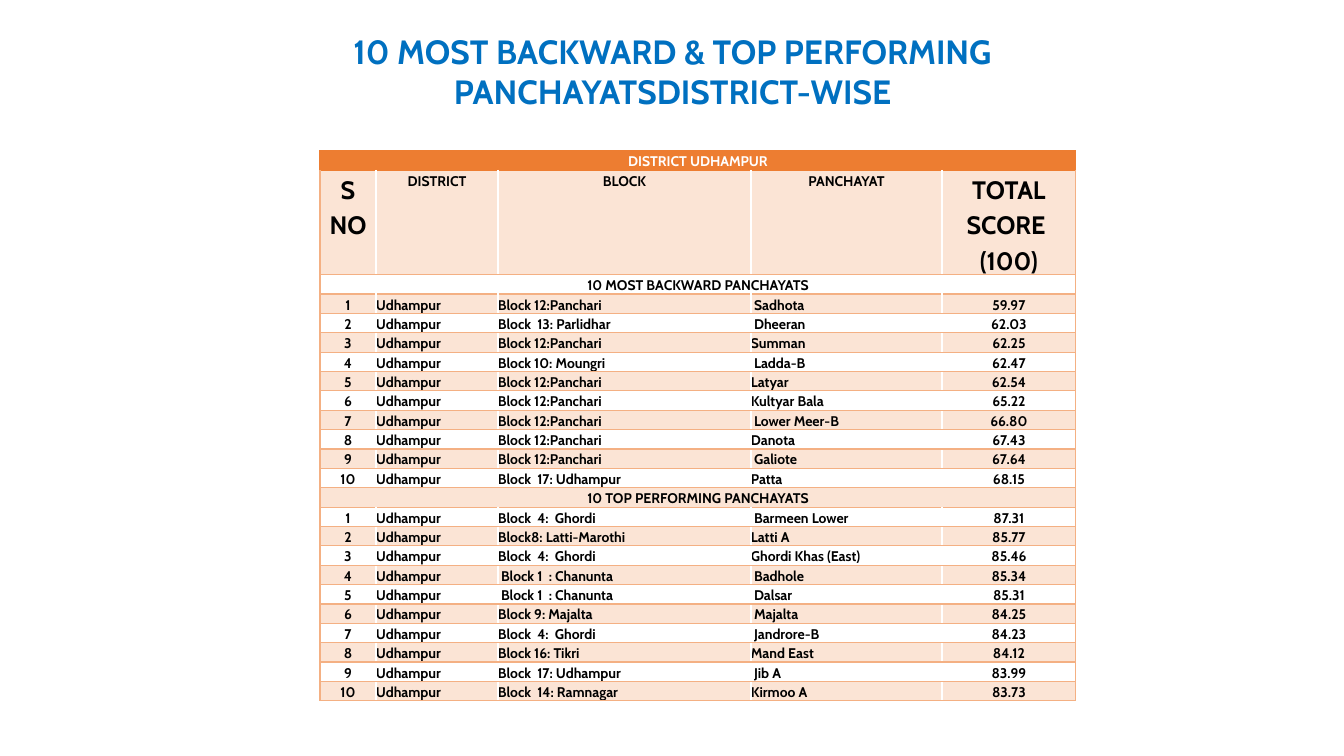
from dataclasses import dataclass

import pptx
import pptx.dml.color
import pptx.enum.text
import pptx.oxml
import pptx.oxml.ns
import pptx.presentation
import pptx.slide
import pptx.table
import pptx.text.text
import pptx.util

SLIDE_WIDTH, SLIDE_HEIGHT = 1344, 756
EMU_PER_PX = 12192000 / SLIDE_WIDTH
FONT = "Cabin"
COLORS = {
    "title": "0070C0",
    "white": "FFFFFF",
    "black": "000000",
    "orange": "ED7D31",
    "peach": "FBE4D5",
    "rule": "F4B083",
}
COLUMN_WIDTHS = (56, 122, 253, 191, 134)
CENTERED_COLUMNS = (0, 4)
ROW_HEIGHT, HEADINGS_HEIGHT = 19, 38
PLAIN_TABLE_STYLE = "{2D5ABB26-0587-4C30-8999-92F81FD0307C}"
CENTER = pptx.enum.text.PP_ALIGN.CENTER
LEFT = pptx.enum.text.PP_ALIGN.LEFT


@dataclass(frozen=True)
class Panchayat:
    block: str
    name: str
    score: str


@dataclass(frozen=True)
class Section:
    heading: str
    panchayats: tuple[Panchayat, ...]


SECTIONS = (
    Section("10 MOST BACKWARD PANCHAYATS", (
        Panchayat("Block 12:Panchari", " Sadhota", "59.97"),
        Panchayat("Block  13: Parlidhar", " Dheeran", "62.03"),
        Panchayat("Block 12:Panchari", "Summan", "62.25"),
        Panchayat("Block 10: Moungri", " Ladda-B", "62.47"),
        Panchayat("Block 12:Panchari", "Latyar", "62.54"),
        Panchayat("Block 12:Panchari", "Kultyar Bala", "65.22"),
        Panchayat("Block 12:Panchari", " Lower Meer-B", "66.80"),
        Panchayat("Block 12:Panchari", "Danota", "67.43"),
        Panchayat("Block 12:Panchari", " Galiote", "67.64"),
        Panchayat("Block  17: Udhampur", "Patta", "68.15"),
    )),
    Section("10 TOP PERFORMING PANCHAYATS", (
        Panchayat("Block  4:  Ghordi", " Barmeen Lower", "87.31"),
        Panchayat("Block8: Latti-Marothi", "Latti A", "85.77"),
        Panchayat("Block  4:  Ghordi", "Ghordi Khas (East)", "85.46"),
        Panchayat(" Block 1  : Chanunta", " Badhole", "85.34"),
        Panchayat(" Block 1  : Chanunta", " Dalsar", "85.31"),
        Panchayat("Block 9: Majalta", " Majalta", "84.25"),
        Panchayat("Block  4:  Ghordi", " Jandrore-B", "84.23"),
        Panchayat("Block 16: Tikri", "Mand East", "84.12"),
        Panchayat("Block  17: Udhampur", " Jib A", "83.99"),
        Panchayat("Block  14: Ramnagar", "Kirmoo A", "83.73"),
    )),
)


def px(length: float) -> pptx.util.Emu:
    return pptx.util.Emu(round(length * EMU_PER_PX))


def rgb(color: str) -> pptx.dml.color.RGBColor:
    return pptx.dml.color.RGBColor.from_string(COLORS[color])


def add_text(paragraph: pptx.text.text._Paragraph, text: str, size: int, color: str) -> None:
    run = paragraph.add_run()
    run.text = text
    run.font.name = FONT
    run.font.size = pptx.util.Pt(size)
    run.font.bold = True
    run.font.color.rgb = rgb(color)


def draw_title(slide: pptx.slide.Slide) -> None:
    title = slide.shapes.add_textbox(px(224), px(25), px(897), px(92))
    frame = title.text_frame
    frame.word_wrap = True
    frame.auto_size = pptx.enum.text.MSO_AUTO_SIZE.SHAPE_TO_FIT_TEXT
    frame.vertical_anchor = pptx.enum.text.MSO_ANCHOR.MIDDLE
    frame.margin_left = frame.margin_right = px(5)
    frame.margin_top = frame.margin_bottom = px(5)
    paragraph = frame.paragraphs[0]
    paragraph.alignment = CENTER
    add_text(paragraph, "10 MOST BACKWARD & TOP PERFORMING PANCHAYATSDISTRICT-WISE", 24, "title")


def set_borders(cell: pptx.table._Cell, edges: dict[str, str]) -> None:
    properties = cell._tc.get_or_add_tcPr()
    namespace = pptx.oxml.ns.nsdecls("a")
    for position, (edge, color) in enumerate(edges.items()):
        properties.insert(position, pptx.oxml.parse_xml(
            f'<a:ln{edge} {namespace} w="12700"><a:solidFill>'
            f'<a:srgbClr val="{COLORS[color]}"/></a:solidFill></a:ln{edge}>'
        ))


def fill_cell(cell: pptx.table._Cell, text: str, size: int, color: str,
              alignment: pptx.enum.text.PP_ALIGN) -> None:
    frame = cell.text_frame
    for position, line in enumerate(text.split("\n")):
        paragraph = frame.add_paragraph() if position else frame.paragraphs[0]
        paragraph.alignment = alignment
        paragraph.line_spacing = 1.15
        add_text(paragraph, line, size, color)


def style_cell(cell: pptx.table._Cell, row: int, column: int, spanning: bool) -> None:
    cell.margin_left = cell.margin_right = 0
    cell.margin_top = cell.margin_bottom = 0
    cell.fill.solid()
    cell.fill.fore_color.rgb = rgb("orange" if row == 0 else "peach" if row % 2 else "white")
    outer = "orange" if row == 0 else "rule"
    last = len(COLUMN_WIDTHS) - 1
    inner = outer if spanning else "white"
    set_borders(cell, {
        "L": outer if column == 0 else inner,
        "R": outer if column == last else inner,
        "T": "orange" if row <= 1 else "rule",
        "B": outer,
    })


def table_rows() -> list[tuple[str, ...]]:
    rows: list[tuple[str, ...]] = [
        ("DISTRICT UDHAMPUR",),
        ("S\nNO", "DISTRICT", "BLOCK", "PANCHAYAT", "TOTAL SCORE \n(100)"),
    ]
    for section in SECTIONS:
        rows.append((section.heading,))
        for rank, panchayat in enumerate(section.panchayats, start=1):
            rows.append((str(rank), "Udhampur", panchayat.block, panchayat.name, panchayat.score))
    return rows


def draw_scores(slide: pptx.slide.Slide) -> None:
    rows = table_rows()
    frame = slide.shapes.add_table(
        len(rows), len(COLUMN_WIDTHS), px(320), px(151), px(sum(COLUMN_WIDTHS)), px(485))
    scores = frame.table
    scores.first_row = scores.horz_banding = False
    scores._tbl.tblPr.find(pptx.oxml.ns.qn("a:tableStyleId")).text = PLAIN_TABLE_STYLE
    for column, width in zip(scores.columns, COLUMN_WIDTHS):
        column.width = px(width)
    for row, texts in enumerate(rows):
        headings = row == 1
        spanning = len(texts) == 1
        scores.rows[row].height = px(HEADINGS_HEIGHT if headings else ROW_HEIGHT)
        for column in range(len(COLUMN_WIDTHS)):
            style_cell(scores.cell(row, column), row, column, spanning)
        if spanning:
            scores.cell(row, 0).merge(scores.cell(row, len(COLUMN_WIDTHS) - 1))
        for column, text in enumerate(texts):
            centered = headings or column in CENTERED_COLUMNS
            size = 18 if headings and column in CENTERED_COLUMNS else 10
            color = "white" if row == 0 else "black"
            fill_cell(scores.cell(row, column), text, size, color, CENTER if centered else LEFT)


def main() -> None:
    presentation = pptx.Presentation()
    presentation.slide_width = px(SLIDE_WIDTH)
    presentation.slide_height = px(SLIDE_HEIGHT)
    slide = presentation.slides.add_slide(presentation.slide_layouts[6])
    draw_title(slide)
    draw_scores(slide)
    presentation.save("out.pptx")


if __name__ == "__main__":
    main()
